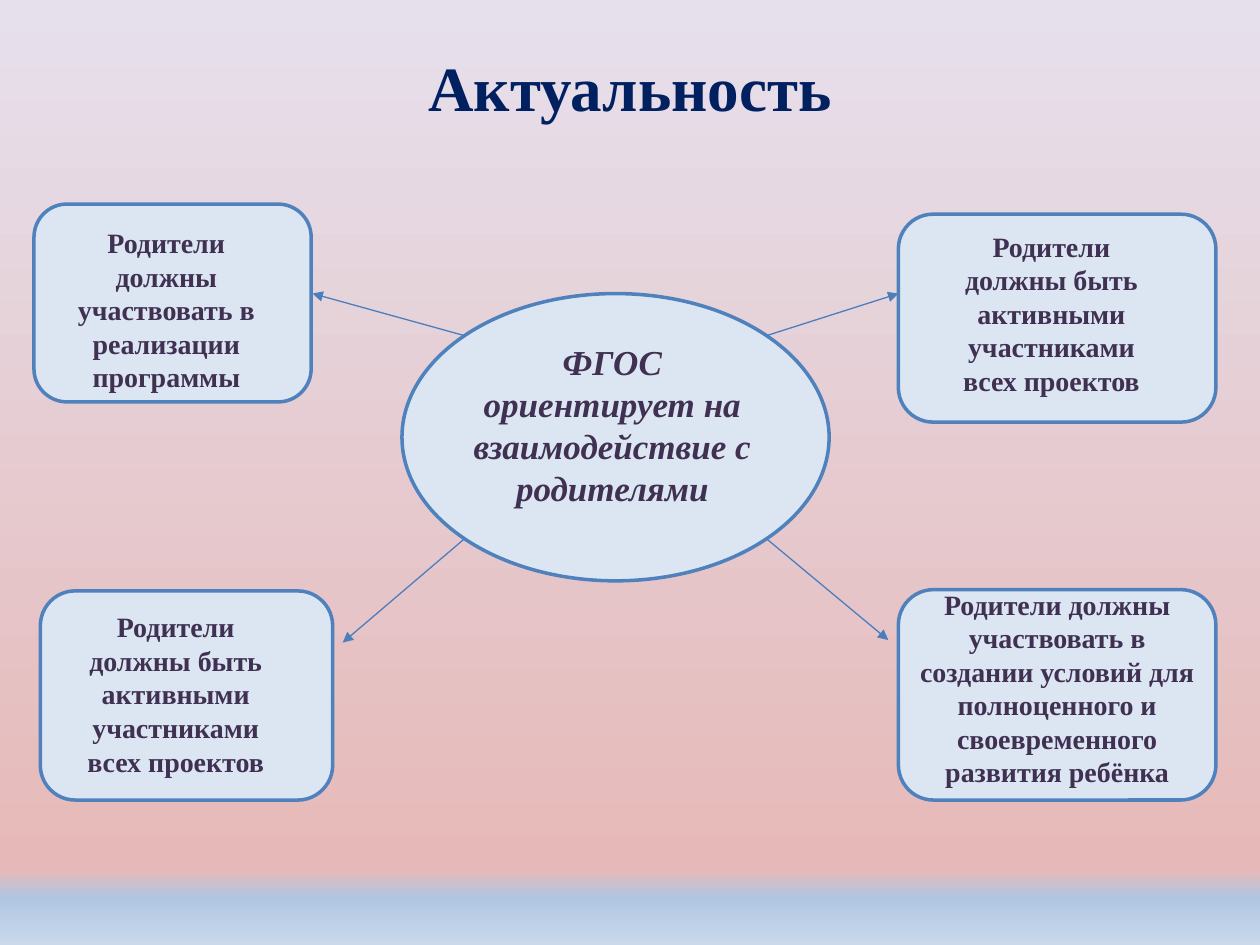
import copy
import math

import pptx
import pptx.dml.color
import pptx.enum.shapes
import pptx.enum.text
import pptx.oxml
import pptx.oxml.ns
import pptx.util

COLORS = {
    "title": "002060", "text": "403152", "panel": "DCE6F2",
    "border": "4F81BD", "arrow": "4B7EBC",
}
BACKGROUND = [(0, "E6E0EC"), (0.92, "E6B9B8"), (0.95, "B0C6E1"), (1, "CAD9EB")]
SHAPES = pptx.enum.shapes.MSO_SHAPE
ANCHORS = pptx.enum.text.MSO_ANCHOR

ACTIVE = "Родители должны быть активными участниками всех проектов"
OVAL = (31.9, 23.3, 33.9, 22.8)
PANELS = [
    (2.7, 16.2, 22, 15.7), (3.2, 46.9, 23.2, 16.6),
    (71.3, 17, 25.2, 16.5), (71.3, 46.8, 25.2, 16.7),
]
CAPTIONS = [
    ((3.6, 17.4, 19.2, 14.5), "Родители должны участвовать в реализации программы"),
    ((73.6, 17.7, 19.7, 14.5), ACTIVE),
    ((4.1, 47.9, 19.7, 14.5), ACTIVE),
    ((71.3, 46.1, 25.2, 17.2), "Родители должны участвовать в создании условий "
                               "для полноценного и своевременного развития ребёнка"),
]
ARROWS = [(45, (70.5, 50.8)), (225, (24.8, 23.3)), (135, (27.2, 51)), (315, (71.3, 23.3))]


def rgb(value):
    """Turn a hex string into a colour."""
    return pptx.dml.color.RGBColor.from_string(value)


class Diagram:
    """Style and current slide, measured on a grid of 100 columns and 75 rows."""

    font = "Times New Roman"

    def __init__(self, deck):
        """Add a title-only slide to the deck."""
        self.cell = deck.slide_width / 100
        self.page = deck.slides.add_slide(deck.slide_layouts[5])

    def place(self, *lengths):
        """Convert grid lengths to slide units."""
        return [round(length * self.cell) for length in lengths]

    def background(self, stops):
        """Fill the slide with a downward gradient."""
        fill = self.page.background.fill
        fill.gradient()
        fill.gradient_angle = 270
        stop_list = next(self.page.element.iter(pptx.oxml.ns.qn("a:gsLst")))
        while len(stop_list) < len(stops):
            stop_list.append(copy.deepcopy(stop_list[0]))
        for stop, (position, color) in zip(fill.gradient_stops, stops):
            stop.position = position
            stop.color.rgb = rgb(color)

    def set_text(self, box, words, size, color, anchor, italic=None):
        """Put one centred bold paragraph into a box."""
        frame = box.text_frame
        frame.word_wrap = True
        frame.vertical_anchor = anchor
        para = frame.paragraphs[0]
        para.alignment = pptx.enum.text.PP_ALIGN.CENTER
        span = para.add_run()
        span.text = words
        span.font.name = self.font
        span.font.size = pptx.util.Pt(size)
        span.font.bold = True
        span.font.italic = italic
        span.font.color.rgb = rgb(COLORS[color])

    def title(self, area, words):
        """Move and fill the title placeholder."""
        box = self.page.shapes.title
        box.left, box.top, box.width, box.height = self.place(*area)
        self.set_text(box, words, 36, "title", ANCHORS.MIDDLE)

    def panel(self, kind, area):
        """Draw a pale outlined shape."""
        shape = self.page.shapes.add_shape(kind, *self.place(*area))
        shape.shadow.inherit = False
        shape.fill.solid()
        shape.fill.fore_color.rgb = rgb(COLORS["panel"])
        shape.line.color.rgb = rgb(COLORS["border"])
        shape.line.width = pptx.util.Pt(2)

    def caption(self, area, words, size=16, italic=None):
        """Add a wrapped text box."""
        box = self.page.shapes.add_textbox(*self.place(*area))
        self.set_text(box, words, size, "text", ANCHORS.TOP, italic)

    def arrow(self, oval, degrees, target):
        """Draw an arrow from the rim of an oval to a target."""
        left, top, width, height = oval
        angle = math.radians(degrees)
        start = (left + width / 2 * (1 + math.cos(angle)),
                 top + height / 2 * (1 + math.sin(angle)))
        connector = self.page.shapes.add_connector(
            pptx.enum.shapes.MSO_CONNECTOR.STRAIGHT, *self.place(*start, *target))
        connector.line.color.rgb = rgb(COLORS["arrow"])
        connector.line.width = pptx.util.Pt(0.75)
        namespace = pptx.oxml.ns.nsdecls("a")
        properties = connector.element.spPr
        outline = properties.find(pptx.oxml.ns.qn("a:ln"))
        outline.append(pptx.oxml.parse_xml(f'<a:tailEnd {namespace} type="triangle"/>'))
        properties.append(pptx.oxml.parse_xml(f"<a:effectLst {namespace}/>"))


def main():
    """Build the slide and save it."""
    deck = pptx.Presentation()
    deck.slide_width = pptx.util.Inches(10)
    deck.slide_height = pptx.util.Inches(7.5)
    diagram = Diagram(deck)
    diagram.background(BACKGROUND)
    diagram.title((5, 1.9, 90, 9.9), "Актуальность")
    diagram.panel(SHAPES.OVAL, OVAL)
    diagram.caption((36.1, 26.5, 25, 14.5),
                    "ФГОС ориентирует на взаимодействие с родителями", 20, True)
    for degrees, target in ARROWS:
        diagram.arrow(OVAL, degrees, target)
    for area in PANELS:
        diagram.panel(SHAPES.ROUNDED_RECTANGLE, area)
    for area, words in CAPTIONS:
        diagram.caption(area, words)
    deck.save("out.pptx")


if __name__ == "__main__":
    main()
